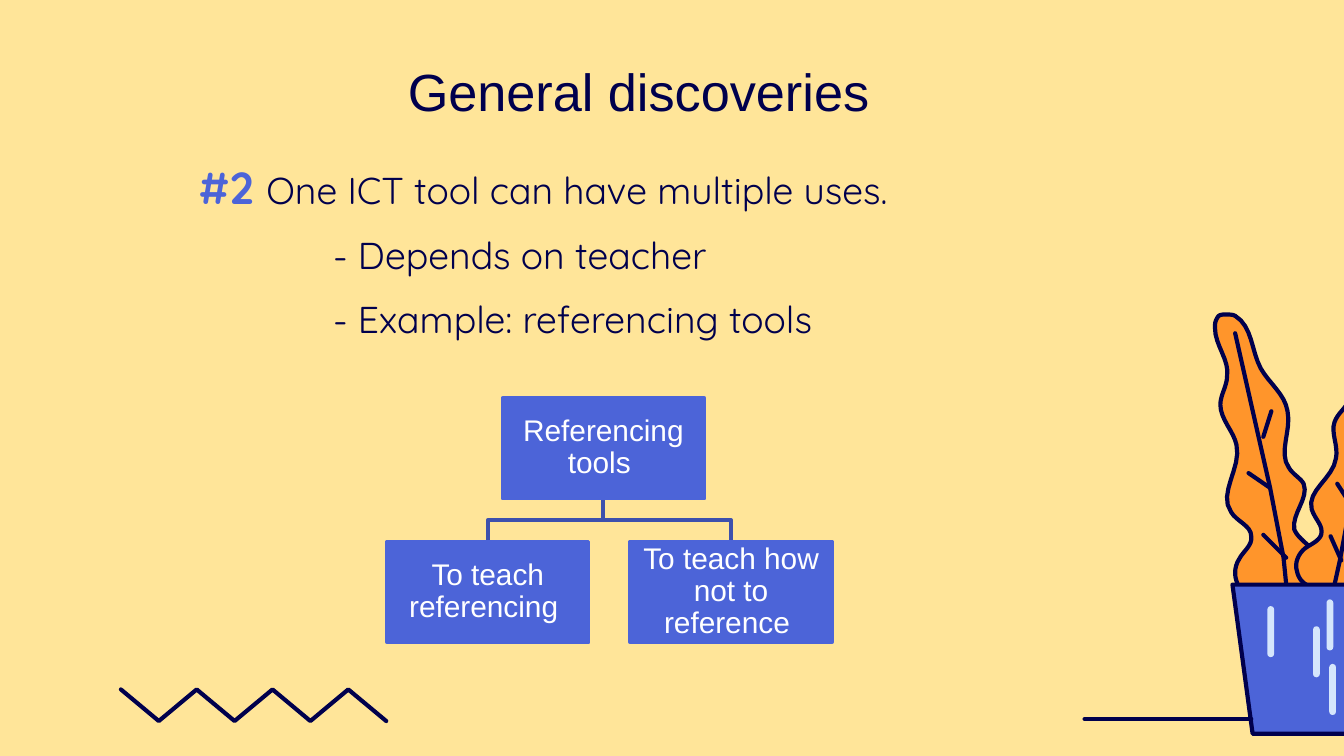
from lxml import etree
from pptx import Presentation
from pptx.dml.color import RGBColor
from pptx.enum.shapes import MSO_CONNECTOR, MSO_SHAPE
from pptx.enum.text import MSO_ANCHOR, PP_ALIGN
from pptx.oxml.ns import qn
from pptx.util import Emu, Pt

STRAIGHT = MSO_CONNECTOR.STRAIGHT
RECTANGLE, ROUNDED = MSO_SHAPE.RECTANGLE, MSO_SHAPE.ROUNDED_RECTANGLE
CENTER, MIDDLE = PP_ALIGN.CENTER, MSO_ANCHOR.MIDDLE

PX = 9144  # 100 px to the inch
NAVY, BLUE, ORANGE, WHITE = "00004D", "4C64D8", "FF952B", "FFFFFF"
CREAM, GLINT, LINK = "FFE599", "D5E6FC", "3D50AD"
CURVE_STEPS = 8

# Leaf outlines: a start point, then two control points and an end point per curve
LEFT_LEAF = [
    (912, 234), (910, 234), (907, 234), (906, 236), (904, 239), (904, 241), (904, 244),
    (904, 257), (915, 268), (913, 280), (913, 287), (908, 294), (908, 301),
    (908, 312), (918, 321), (920, 331), (924, 348), (906, 367), (916, 381),
    (920, 388), (931, 391), (931, 399), (932, 406), (925, 410), (922, 416),
    (918, 422), (918, 430), (922, 437), (926, 442), (933, 446), (939, 446),
    (947, 446), (955, 445), (963, 444), (978, 443), (988, 422), (978, 411),
    (974, 405), (966, 401), (963, 394), (961, 382), (974, 371), (970, 360),
    (968, 356), (962, 353), (959, 348), (951, 337), (961, 320), (958, 306),
    (956, 293), (944, 285), (938, 274), (931, 261), (932, 243), (919, 235),
    (917, 234), (915, 234), (912, 234)]
RIGHT_LEAF = [
    (1013, 262), (1012, 262), (1011, 262), (1010, 262), (1008, 263), (1007, 265), (1006, 268),
    (1003, 278), (1008, 289), (1003, 299), (1001, 304), (995, 308), (993, 314),
    (990, 322), (996, 332), (994, 341), (992, 356), (972, 365), (976, 379),
    (978, 386), (985, 391), (983, 398), (981, 403), (975, 405), (971, 408),
    (966, 412), (963, 419), (965, 425), (966, 431), (971, 436), (977, 437),
    (983, 439), (990, 440), (996, 442), (1010, 446), (1020, 431), (1017, 420),
    (1015, 415), (1010, 409), (1010, 403), (1011, 393), (1025, 388), (1024, 378),
    (1024, 374), (1021, 370), (1020, 366), (1016, 354), (1029, 344), (1031, 332),
    (1033, 321), (1026, 312), (1025, 301), (1023, 289), (1029, 274), (1021, 265),
    (1019, 263), (1016, 262), (1013, 262)]
VEINS = [
    [(919, 248), (945, 363), (955, 415), (957, 435)],
    [(929, 352), (945, 363)],
    [(940, 398), (957, 415)],
    [(946, 306), (940, 325)],
    [(1017, 276), (1005, 374), (997, 417), (993, 435)],
    [(995, 360), (1004, 374)],
    [(990, 399), (998, 417)]]
POT = [(917, 435), (932, 546), (1009, 546), (1019, 435)]
GLINTS = [(943, 451), (987, 446), (977, 466), (989, 494)]


def px(length):
    return Emu(round(length * PX))


def color(code):
    return RGBColor.from_string(code)


def set_values(target, values):
    for name, value in values.items():
        setattr(target, name, value)


def style(shape, fill=None, line=None, width=2.25):
    shape.shadow.inherit = False
    if fill:
        shape.fill.solid()
        shape.fill.fore_color.rgb = color(fill)
    else:
        shape.fill.background()
    if line:
        style_line(shape, line, width)
    else:
        shape.line.fill.background()


def style_line(shape, code, width):
    set_values(shape.line, {"width": Pt(width)})
    shape.line.color.rgb = color(code)
    stroke = shape.line._get_or_add_ln()
    stroke.set("cap", "rnd")
    etree.SubElement(stroke, qn("a:round"))


def curve_points(outline):
    """Turn a chain of cubic curves into points along them."""
    points = [outline[0]]
    for first in range(0, len(outline) - 1, 3):
        a, b, c, d = outline[first:first + 4]
        for step in range(1, CURVE_STEPS + 1):
            t = step / CURVE_STEPS
            weights = ((1 - t) ** 3, 3 * t * (1 - t) ** 2, 3 * t * t * (1 - t), t ** 3)
            points.append(tuple(sum(w * point[axis] for w, point in zip(weights, (a, b, c, d)))
                                for axis in (0, 1)))
    return points


def add_outline(page, points, fill=None, line=NAVY, width=2.25):
    """A closed outline if filled, otherwise an open stroke."""
    corners = [(px(x), px(y)) for x, y in points]
    builder = page.shapes.build_freeform(*corners[0], scale=1.0)
    builder.add_line_segments(corners[1:], close=bool(fill))
    style(builder.convert_to_shape(), fill, line, width)


def add_line(page, start, end, code=NAVY, width=2.25):
    line = page.shapes.add_connector(STRAIGHT, *map(px, start + end))
    style_line(line, code, width)
    etree.SubElement(line._element.spPr, qn("a:effectLst"))


def add_span(para, text, size, code, font, bold=False):
    span = para.add_run()
    span.text = text
    set_values(span.font, {"size": Pt(size), "name": font, "bold": bold})
    span.font.color.rgb = color(code)


def add_text_box(page, place, top_inset):
    frame = page.shapes.add_textbox(*map(px, place)).text_frame
    set_values(frame, {"word_wrap": True, "margin_left": px(10), "margin_right": px(10),
                       "margin_top": px(top_inset), "margin_bottom": px(10)})
    return frame


def add_node(page, left, top, text):
    node = page.shapes.add_shape(RECTANGLE, px(left), px(top), px(150), px(75))
    style(node, BLUE, BLUE, 2)
    frame = node.text_frame
    set_values(frame, {"word_wrap": True, "vertical_anchor": MIDDLE, "margin_left": px(1),
                       "margin_right": px(1), "margin_top": px(1), "margin_bottom": px(1)})
    para = frame.paragraphs[0]
    set_values(para, {"alignment": CENTER, "line_spacing": 0.9})
    add_span(para, text, 16, WHITE, "Arial")


def add_plant(page):
    for leaf in (LEFT_LEAF, RIGHT_LEAF):
        add_outline(page, curve_points(leaf), ORANGE)
    for vein in VEINS:
        add_outline(page, vein)
    add_outline(page, POT, BLUE)
    for left, top in GLINTS:
        glint = page.shapes.add_shape(ROUNDED, px(left), px(top), px(5), px(38))
        glint.adjustments[0] = 0.5
        style(glint, GLINT)


def add_body(page):
    frame = add_text_box(page, (138, 64, 598, 181), 55)
    para = frame.paragraphs[0]
    add_span(para, "#2 ", 24, BLUE, "Quicksand", True)
    add_span(para, "One ICT tool can have multiple uses.", 20, NAVY, "Quicksand")
    for text in ("- Depends on teacher", "- Example: referencing tools"):
        para = frame.add_paragraph()
        para.space_before = Pt(10)
        para._p.get_or_add_pPr().set("marL", str(px(100)))
        add_span(para, text, 20, NAVY, "Quicksand")


def add_title(page):
    para = add_text_box(page, (54, 30, 842, 109), 14).paragraphs[0]
    para.alignment = CENTER
    add_span(para, "General discoveries", 28, NAVY, "Arial")


def add_hierarchy(page):
    for child in (544, 363):
        add_outline(page, [(449, 371), (449, 387), (child, 387), (child, 403)], line=LINK, width=2)
    add_node(page, 374, 296, "Referencing tools ")
    add_node(page, 288, 403, "To teach referencing ")
    add_node(page, 469, 403, "To teach how not to reference ")


def main():
    deck = Presentation()
    set_values(deck, {"slide_width": px(1000), "slide_height": px(562.5)})
    page = deck.slides.add_slide(deck.slide_layouts[6])
    page.background.fill.solid()
    page.background.fill.fore_color.rgb = color(CREAM)

    # Decoration: plant, zigzag and ground line
    add_plant(page)
    add_outline(page, [(90 + 28.2 * i, 536.5 if i % 2 else 513) for i in range(8)])
    add_line(page, (931, 535), (807, 535))

    # Content
    add_body(page)
    add_title(page)
    add_hierarchy(page)
    deck.save("out.pptx")


if __name__ == "__main__":
    main()
